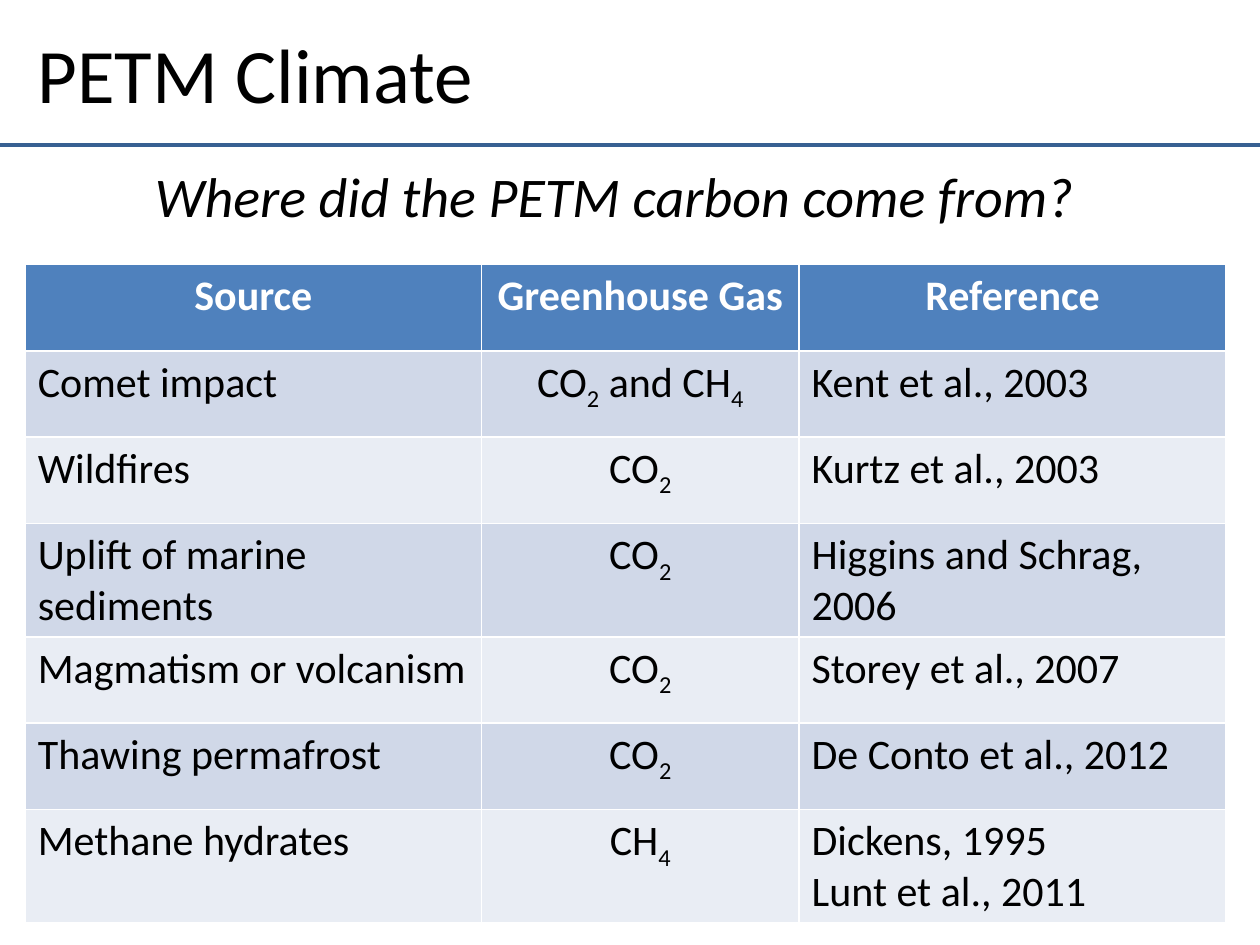
"""Build the PETM Climate slide with its table of carbon sources."""
from itertools import groupby

from lxml import etree
from pptx import Presentation
from pptx import util as u
from pptx.dml import color
from pptx.enum import shapes, text
from pptx.oxml import ns

Pt = u.Pt
COLORS = {
    "ink": "000000",
    "rule": "376092",
    "header": "4F81BD",
    "header_text": "FFFFFF",
    "odd": "D0D8E8",
    "even": "E9EDF4",
}
HEADINGS = ["Source", "Greenhouse Gas", "Reference"]
SOURCES = [
    ["Comet impact", "CO2 and CH4", "Kent et al., 2003"],
    ["Wildfires", "CO2", "Kurtz et al., 2003"],
    ["Uplift of marine sediments", "CO2", "Higgins and Schrag, 2006"],
    ["Magmatism or volcanism", "CO2", "Storey et al., 2007"],
    ["Thawing permafrost", "CO2", "De Conto et al., 2012"],
    ["Methane hydrates", "CH4", "Dickens, 1995\nLunt et al., 2011"],
]
COLUMN_WIDTHS = [260.75, 181.5, 244]
ROW_HEIGHT = 49.3
GAS = 1


def rgb(name):
    return color.RGBColor.from_string(COLORS[name])


def add_run(paragraph, words, size, ink="ink", bold=False, italic=False):
    run = paragraph.add_run()
    run.text = words
    run.font.name = "Calibri"
    run.font.size = Pt(size)
    run.font.bold = bold
    run.font.italic = italic
    run.font.color.rgb = rgb(ink)
    return run


prs = Presentation()
prs.slide_width, prs.slide_height = Pt(720), Pt(540)
slide = prs.slides.add_slide(prs.slide_layouts[6])

title = slide.shapes.add_textbox(Pt(14.4), Pt(0), Pt(669.6), Pt(82.8)).text_frame
title.word_wrap = True
title.vertical_anchor = text.MSO_ANCHOR.MIDDLE
add_run(title.paragraphs[0], "PETM Climate", 44)

rule = slide.shapes.add_connector(
    shapes.MSO_CONNECTOR.STRAIGHT, Pt(0), Pt(82.8), Pt(720), Pt(82.8))
rule.line.color.rgb = rgb("rule")
rule.line.width = Pt(2)
etree.SubElement(rule._element.spPr, ns.qn("a:effectLst"))

question = slide.shapes.add_textbox(Pt(81.4), Pt(88.6), Pt(545), Pt(46)).text_frame
question.word_wrap = True
question.auto_size = text.MSO_AUTO_SIZE.SHAPE_TO_FIT_TEXT
add_run(question.paragraphs[0], "Where did the PETM carbon come from?", 32, italic=True)

rows = [HEADINGS] + SOURCES
carbon = slide.shapes.add_table(
    len(rows), len(HEADINGS), Pt(14.4), Pt(151.2),
    Pt(sum(COLUMN_WIDTHS)), Pt(ROW_HEIGHT * len(rows))).table
for column, width in zip(carbon.columns, COLUMN_WIDTHS):
    column.width = Pt(width)

for r, row in enumerate(rows):
    carbon.rows[r].height = Pt(ROW_HEIGHT)
    heading = r == 0
    band = "header" if heading else ("odd" if r % 2 else "even")
    for c, entry in enumerate(row):
        cell = carbon.cell(r, c)
        cell.fill.solid()
        cell.fill.fore_color.rgb = rgb(band)
        for n, line in enumerate(entry.split("\n")):
            frame = cell.text_frame
            paragraph = frame.add_paragraph() if n else frame.paragraphs[0]
            if heading or c == GAS:
                paragraph.alignment = text.PP_ALIGN.CENTER
            if heading:
                add_run(paragraph, line, 24, "header_text", bold=True)
            elif c == GAS:
                for subscript, letters in groupby(line, str.isdigit):
                    formula = add_run(paragraph, "".join(letters), 24)
                    if subscript:
                        formula.font._element.set("baseline", "-25000")
            else:
                add_run(paragraph, line, 24)

prs.save("out.pptx")
